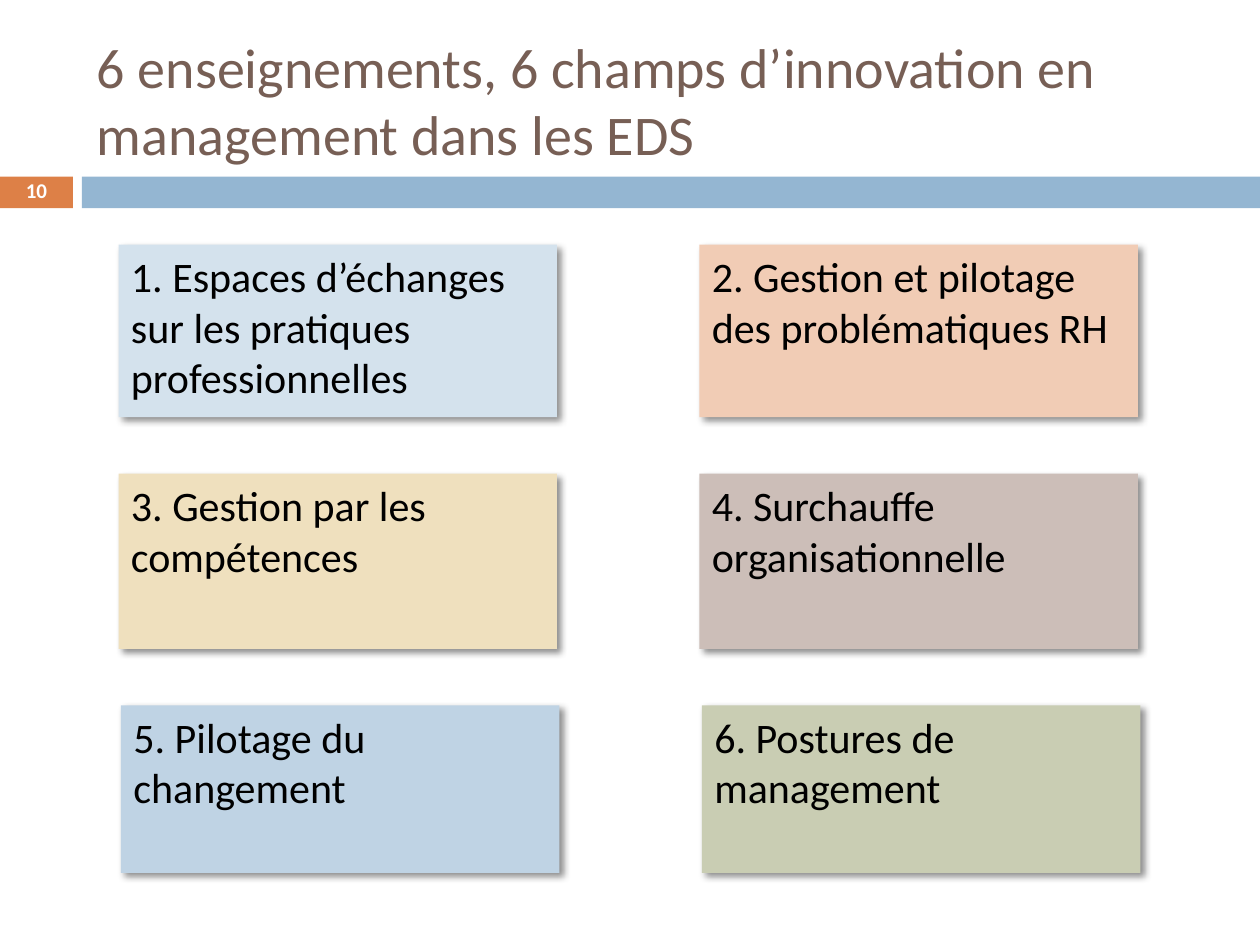
from lxml.etree import SubElement
from pptx import Presentation
from pptx.dml.color import RGBColor
from pptx.enum.shapes import MSO_SHAPE
from pptx.enum.text import MSO_ANCHOR, PP_ALIGN
from pptx.oxml.ns import qn
from pptx.util import Cm, Pt

TITLE = "6 enseignements, 6 champs d’innovation en management dans les EDS"
PAGE = "10"
CARDS = [
    ("1. Espaces d’échanges sur les pratiques professionnelles", "D4E2ED"),
    ("2. Gestion et pilotage des problématiques RH", "F1CCB5"),
    ("3. Gestion par les compétences", "EFE0BE"),
    ("4. Surchauffe organisationnelle", "CCBEB8"),
    ("5. Pilotage du changement", "BFD3E4"),
    ("6. Postures de management", "C9CDB3"),
]
# Each row of cards: left, top, height in cm
ROWS = [(2.39, 4.93, 3.48), (2.39, 9.55, 3.53), (2.44, 14.22, 3.38)]
COLUMN_STEP, CARD_WIDTH = 11.71, 8.84

THEME = {
    "orange": "DD8047", "blue": "94B6D2",
    "title": {"size": Pt(32), "color": "775F55", "bold": False},
    "page": {"size": Pt(12), "color": "FFFFFF", "bold": True},
    "card": {"size": Pt(24), "color": "000000", "bold": False},
    "font": "Calibri",
}


def write(shape, text, style, anchor, **paragraph_format):
    tf = shape.text_frame
    tf.word_wrap = True
    tf.vertical_anchor = anchor
    p = tf.paragraphs[0]
    for name, value in paragraph_format.items():
        setattr(p, name, value)
    r = p.add_run()
    r.text = text
    r.font.name = THEME["font"]
    r.font.size = style["size"]
    r.font.bold = style["bold"]
    r.font.color.rgb = RGBColor.from_string(style["color"])


def add_block(s, box, color):
    sp = s.shapes.add_shape(MSO_SHAPE.RECTANGLE, *map(Cm, box))
    sp.fill.solid()
    sp.fill.fore_color.rgb = RGBColor.from_string(color)
    sp.line.fill.background()
    sp.shadow.inherit = False
    return sp


def add_shadow(sp):
    effects = sp._element.spPr.find(qn("a:effectLst"))
    outer = SubElement(effects, qn("a:outerShdw"), blurRad=str(Pt(4)),
                       dist=str(Pt(3)), dir=str(45 * 60000), rotWithShape="0")
    color = SubElement(outer, qn("a:srgbClr"), val="000000")
    SubElement(color, qn("a:alpha"), val="43000")


def main():
    prs = Presentation()
    prs.slide_width, prs.slide_height = Cm(25.4), Cm(19.05)
    s = prs.slides.add_slide(prs.slide_layouts[5])

    # Band under the title
    add_block(s, (0, 3.56, 1.47, 0.64), THEME["orange"])
    add_block(s, (1.65, 3.56, 23.75, 0.64), THEME["blue"])

    # Title
    title = s.shapes.title
    title.left, title.top, title.width, title.height = map(Cm, (1.7, 0.64, 23.7, 2.74))
    write(title, TITLE, THEME["title"], MSO_ANCHOR.MIDDLE, alignment=PP_ALIGN.LEFT)

    # Page number
    number = s.shapes.add_textbox(*map(Cm, (0, 3.53, 1.47, 0.69)))
    write(number, PAGE, THEME["page"], MSO_ANCHOR.MIDDLE,
          alignment=PP_ALIGN.CENTER, line_spacing=0.8)

    # Two columns of cards
    for i, (text, color) in enumerate(CARDS):
        row, column = divmod(i, 2)
        left, top, height = ROWS[row]
        card = add_block(s, (left + column * COLUMN_STEP, top, CARD_WIDTH, height), color)
        add_shadow(card)
        write(card, text, THEME["card"], MSO_ANCHOR.TOP,
              alignment=PP_ALIGN.LEFT, space_before=Pt(7))

    prs.save("out.pptx")


if __name__ == "__main__":
    main()
